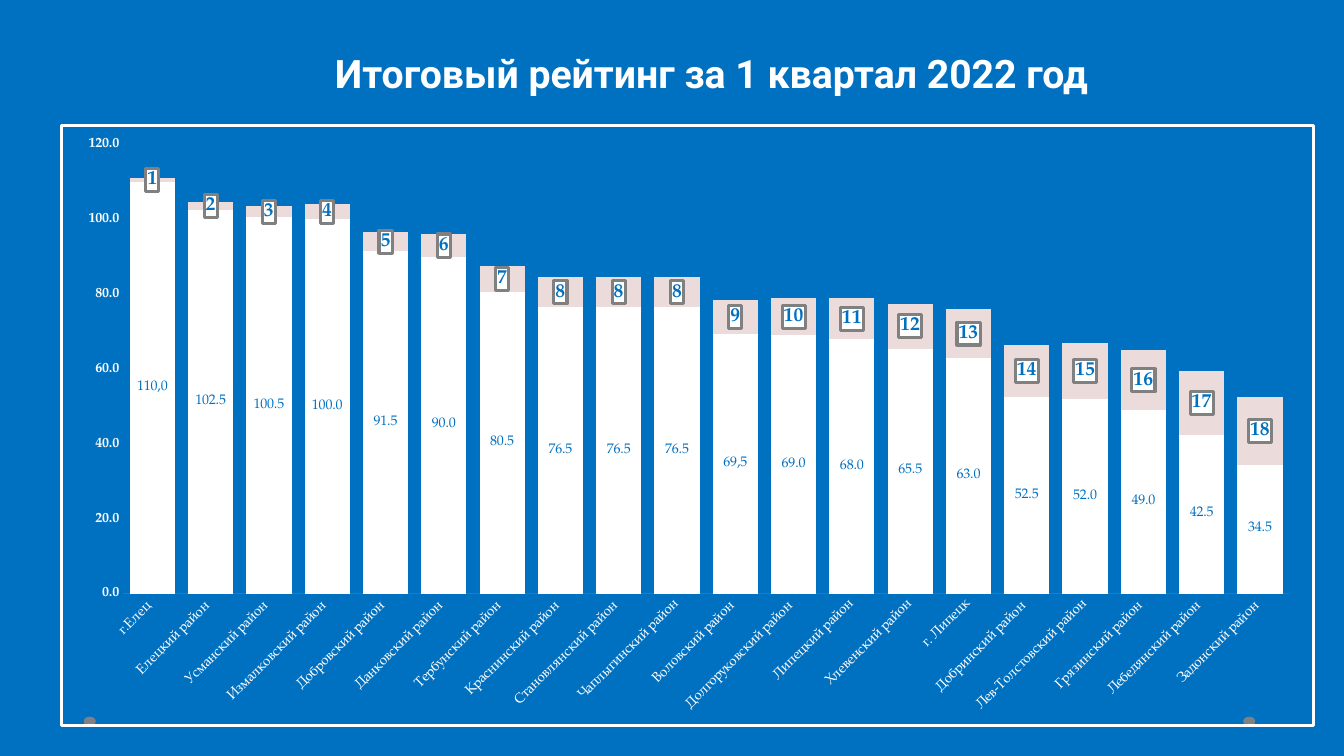
"""Build the slide with the district rating for the first quarter of 2022."""
from dataclasses import dataclass

from lxml.etree import fromstring
from pptx import Presentation
from pptx.chart.data import CategoryChartData
from pptx.dml.color import RGBColor
from pptx.enum.chart import XL_CHART_TYPE as ChartType, XL_LABEL_POSITION as LabelPosition
from pptx.enum.chart import XL_TICK_MARK as TickMark
from pptx.enum.shapes import MSO_SHAPE as Preset
from pptx.enum.text import MSO_ANCHOR as Anchor, PP_ALIGN as Align
from pptx.util import Inches, Pt


@dataclass(frozen=True)
class Theme:
    blue: str = "0070C0"
    white: str = "FFFFFF"
    pink: str = "ECDBDB"
    grey: str = "808080"
    brown: str = "9C5252"
    title_font: str = "Roboto"
    chart_font: str = "TeX Gyre Pagella"
    title_size: int = 28
    rank_size: int = 14
    label_size: int = 10


THEME = Theme()
RATING = [
    ("г.Елец ", 110, 1),
    ("Елецкий район ", 102.5, 2),
    ("Усманский район ", 100.5, 3),
    ("Измалковский район ", 100, 4),
    ("Добровский район ", 91.5, 5),
    ("Данковский район ", 90, 6),
    ("Тербунский район ", 80.5, 7),
    ("Краснинский район ", 76.5, 8),
    ("Становлянский район ", 76.5, 8),
    ("Чаплыгинский район", 76.5, 8),
    ("Воловский район ", 69.5, 9),
    ("Долгоруковский район ", 69, 10),
    ("Липецкий район", 68, 11),
    ("Хлевенский район", 65.5, 12),
    ("г. Липецк", 63, 13),
    ("Добринский район ", 52.5, 14),
    ("Лев-Толстовский район", 52, 15),
    ("Грязинский район ", 49, 16),
    ("Лебедянский район ", 42.5, 17),
    ("Задонский район ", 34.5, 18),
]
COMMA_LABELS = {0: "110,0", 10: "69,5"}
CHART_BOX = (0.6, 1.23, 12.44, 5.98)
PLOT_BOX = (1.21, 1.42, 11.59, 4.48)
CHART_NS = "http://schemas.openxmlformats.org/drawingml/2006/chart"
DRAW_NS = "http://schemas.openxmlformats.org/drawingml/2006/main"


def set_font(font, face, size, color, bold):
    font.name, font.size, font.bold = face, Pt(size), bold
    font.color.rgb = RGBColor.from_string(color)


def frame_xml(fill, line, points):
    solid = '<a:solidFill><a:srgbClr val="{}"/></a:solidFill>'
    inside = solid.format(fill) if fill else "<a:noFill/>"
    edge = solid.format(line) if line else "<a:noFill/>"
    return fromstring(
        f'<c:spPr xmlns:c="{CHART_NS}" xmlns:a="{DRAW_NS}">{inside}'
        f'<a:ln w="{Pt(points)}">{edge}</a:ln></c:spPr>'
    )


deck = Presentation()
deck.slide_width, deck.slide_height = Inches(13.33), Inches(7.5)
page = deck.slides.add_slide(deck.slide_layouts[5])
page.background.fill.solid()
page.background.fill.fore_color.rgb = RGBColor.from_string(THEME.blue)

title = page.shapes.title
title.left, title.top, title.width, title.height = map(Inches, (2.49, 0.44, 9.13, 0.57))
title.text_frame.vertical_anchor = Anchor.MIDDLE
para = title.text_frame.paragraphs[0]
para.alignment = Align.CENTER
span = para.add_run()
span.text = "Итоговый рейтинг за 1 квартал 2022 год"
set_font(span.font, THEME.title_font, THEME.title_size, THEME.white, True)

for left in (12.33, 0.83):
    dot = page.shapes.add_shape(Preset.OVAL, *map(Inches, (left, 7.11, 0.12, 0.09)))
    dot.shadow.inherit = False
    dot.fill.solid()
    dot.fill.fore_color.rgb = RGBColor.from_string(THEME.grey)
    dot.line.fill.background()

districts, scores, ranks = zip(*RATING)
data = CategoryChartData(number_format="0.0")
data.categories = districts
data.add_series("Series 1", scores)
data.add_series("Series 2", ranks, number_format="General")
chart = page.shapes.add_chart(
    ChartType.COLUMN_STACKED, *map(Inches, CHART_BOX), data
).chart
chart.has_title = False
chart.has_legend = False
set_font(chart.font, THEME.chart_font, THEME.label_size, THEME.white, True)

plot = chart.plots[0]
plot.gap_width, plot.overlap = 29, 100
plot.vary_by_categories = False
score_bars, rank_bars = plot.series
styles = (
    (score_bars, THEME.white, THEME.label_size, False, "0.0"),
    (rank_bars, THEME.pink, THEME.rank_size, True, "General"),
)
for bars, color, size, bold, number_format in styles:
    bars.format.fill.solid()
    bars.format.fill.fore_color.rgb = RGBColor.from_string(color)
    bars.format.line.fill.background()
    labels = bars.data_labels
    labels.show_value = True
    labels.number_format = number_format
    labels.number_format_is_linked = False
    labels.position = LabelPosition.CENTER
    set_font(labels.font, THEME.chart_font, size, THEME.blue, bold)

for index, wording in COMMA_LABELS.items():
    label = score_bars.points[index].data_label
    span = label.text_frame.paragraphs[0].add_run()
    span.text = wording
    set_font(span.font, THEME.chart_font, THEME.label_size, THEME.blue, False)
    label.position = LabelPosition.CENTER

values, names = chart.value_axis, chart.category_axis
values.minimum_scale, values.maximum_scale, values.major_unit = 0, 120, 20
values.has_major_gridlines = False
values.tick_labels.number_format = "0.0"
values.tick_labels.number_format_is_linked = False
values.format.line.fill.background()
names.format.line.color.rgb = RGBColor.from_string(THEME.brown)
names.format.line.width = Pt(0.75)
for axis, bold in ((values, True), (names, False)):
    axis.major_tick_mark = axis.minor_tick_mark = TickMark.NONE
    set_font(axis.tick_labels.font, THEME.chart_font, THEME.label_size, THEME.white, bold)

space = chart.element
rank_text = space.xpath(".//c:ser[2]/c:dLbls/c:txPr")[0]
rank_text.addprevious(frame_xml(THEME.white, THEME.grey, 2.25))
space.xpath(".//c:catAx/c:txPr/a:bodyPr")[0].set("rot", str(-45 * 60000))
space.xpath("./c:chart")[0].addnext(frame_xml(None, THEME.white, 2))

area = space.xpath(".//c:plotArea")[0]
for old_layout in area.xpath("./c:layout"):
    area.remove(old_layout)
chart_left, chart_top, chart_width, chart_height = CHART_BOX
plot_left, plot_top, plot_width, plot_height = PLOT_BOX
shares = {
    "x": (plot_left - chart_left) / chart_width,
    "y": (plot_top - chart_top) / chart_height,
    "w": plot_width / chart_width,
    "h": plot_height / chart_height,
}
sides = "".join(f'<c:{side} val="{share:.4f}"/>' for side, share in shares.items())
area.insert(0, fromstring(
    f'<c:layout xmlns:c="{CHART_NS}"><c:manualLayout><c:layoutTarget val="inner"/>'
    f'<c:xMode val="edge"/><c:yMode val="edge"/>{sides}</c:manualLayout></c:layout>'
))
area.append(frame_xml(THEME.blue, None, 0))

deck.save("out.pptx")
